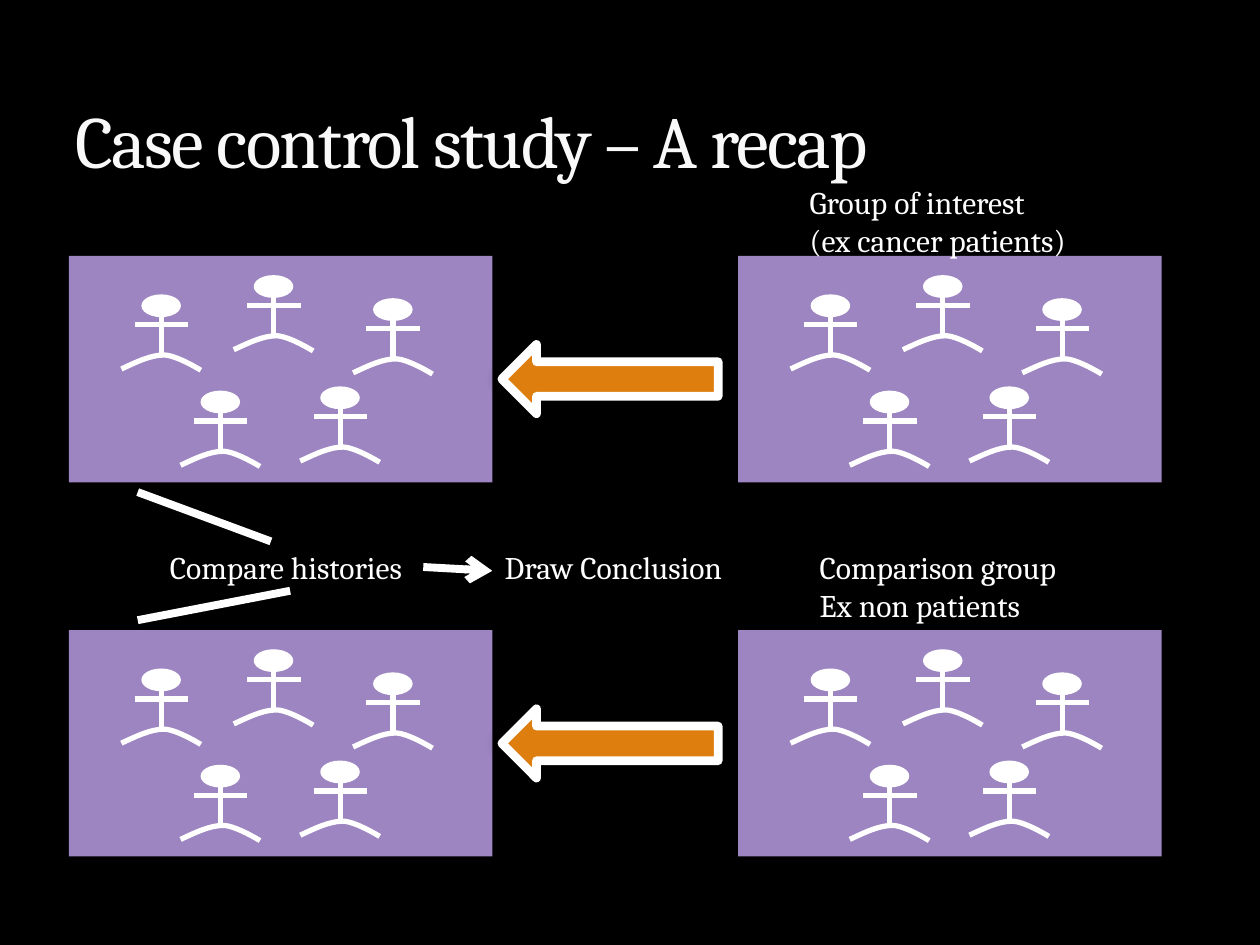
from lxml import etree
from pptx import Presentation
from pptx.dml.color import RGBColor
from pptx.enum.shapes import MSO_CONNECTOR, MSO_SHAPE
from pptx.enum.text import MSO_ANCHOR
from pptx.oxml.ns import qn
from pptx.util import Pt

STRAIGHT = MSO_CONNECTOR.STRAIGHT
RECTANGLE, OVAL, LEFT_ARROW = MSO_SHAPE.RECTANGLE, MSO_SHAPE.OVAL, MSO_SHAPE.LEFT_ARROW
TOP, BOTTOM = MSO_ANCHOR.TOP, MSO_ANCHOR.BOTTOM

HEX = {"background": "000000", "white": "FFFFFF", "title": "F9F9F9",
       "panel": "9C85C0", "arrow": "DD7E0E", "shadow": "000000"}
COLOR = {name: RGBColor.from_string(value) for name, value in HEX.items()}

prs = Presentation()
prs.slide_width, prs.slide_height = Pt(720), Pt(540)
slide = prs.slides.add_slide(prs.slide_layouts[6])
slide.background.fill.solid()
slide.background.fill.fore_color.rgb = COLOR["background"]


def add_line(shapes, x1, y1, x2, y2, width):
    line = shapes.add_connector(STRAIGHT, Pt(x1), Pt(y1), Pt(x2), Pt(y2))
    line.line.color.rgb = COLOR["white"]
    line.line.width = Pt(width)
    etree.SubElement(line._element.spPr, qn("a:effectLst"))
    return line


def add_filled(shapes, kind, x, y, width, height, color):
    shape = shapes.add_shape(kind, Pt(x), Pt(y), Pt(width), Pt(height))
    shape.shadow.inherit = False
    shape.fill.solid()
    shape.fill.fore_color.rgb = COLOR[color]
    shape.line.fill.background()
    return shape


# Legs: a start point, then two Bezier curves of three points each,
# measured from the spine and the top of the head
leg_points = [(-22.8, 42.7), (-14.4, 38.8), (-5.9, 34.6), (1.8, 34.7),
              (9.1, 35), (22.6, 43.4), (22.6, 43.4)]

# Four panels of five people, each placed by spine and top of head
people = [(52.8, 22), (117, 11), (86.6, 77), (155, 74.6), (185.2, 24.2)]
for panel_y in (146.2, 360):
    for panel_x in (39.4, 421.8):
        group = slide.shapes.add_group_shape().shapes
        add_filled(group, RECTANGLE, panel_x, panel_y, 242, 129.4, "panel")
        for dx, dy in people:
            spine, top = panel_x + dx, panel_y + dy
            outline = [(Pt(spine + x), Pt(top + y)) for x, y in leg_points]
            builder = group.build_freeform(*outline[0])
            builder.add_line_segments(outline[1:], close=False)
            legs = builder.convert_to_shape()
            # Turn each three line segments into one Bezier curve
            segments = list(legs._element.iter(qn("a:lnTo")))
            for first in range(0, len(segments), 3):
                bezier = etree.Element(qn("a:cubicBezTo"))
                segments[first].addprevious(bezier)
                for segment in segments[first:first + 3]:
                    bezier.append(segment[0])
                    segment.getparent().remove(segment)
            legs.shadow.inherit = False
            legs.fill.background()
            legs.line.color.rgb = COLOR["white"]
            legs.line.width = Pt(3)
            add_line(group, spine, top + 10.9, spine, top + 34.7, 3)
            add_line(group, spine - 15.2, top + 17.4, spine + 15.4, top + 17.4, 3)
            add_filled(group, OVAL, spine - 11.4, top, 22.6, 13, "white")

# Arrows from the groups back to their histories
for arrow_y in (196.8, 405):
    arrow = add_filled(slide.shapes, LEFT_ARROW, 286.8, arrow_y, 123.6, 39.6, "arrow")
    arrow.line.color.rgb = COLOR["white"]
    arrow.line.width = Pt(5)
    effects = arrow._element.spPr.find(qn("a:effectLst"))
    shadow = etree.SubElement(effects, qn("a:outerShdw"), blurRad=str(Pt(7.5)),
                              dist="0", dir="0", algn="ctr", rotWithShape="0")
    shade = etree.SubElement(shadow, qn("a:srgbClr"), val=HEX["shadow"])
    etree.SubElement(shade, qn("a:alpha"), val="50000")

# Lines from the histories to the comparison, then on to the conclusion
add_line(slide.shapes, 78.7, 281.2, 154.8, 309.4, 4.5)
add_line(slide.shapes, 78.7, 354.4, 165.8, 337.6, 4.5)
to_conclusion = add_line(slide.shapes, 241.9, 324, 281.3, 326.2, 4.5)
etree.SubElement(to_conclusion.line._get_or_add_ln(), qn("a:tailEnd"), type="arrow")

# Title and labels
title_format = {"name": "Cambria", "size": Pt(42)}
label_format = {"name": "Cambria", "size": Pt(18)}
texts = [
    (["Case control study – A recap"], 36, 12.2, 648, 95.8, title_format, "title", BOTTOM),
    (["Compare histories"], 90, 309.6, 163.4, 29, label_format, "white", TOP),
    (["Draw Conclusion"], 281.3, 309.6, 168.5, 29, label_format, "white", TOP),
    (["Comparison group", "Ex non patients"], 461.3, 309.6, 168.5, 51,
     label_format, "white", TOP),
    (["Group of interest", "(ex cancer patients)"], 455.6, 101.2, 168.5, 51,
     label_format, "white", TOP),
]
for lines, x, y, width, height, font_format, color, anchor in texts:
    frame = slide.shapes.add_textbox(Pt(x), Pt(y), Pt(width), Pt(height)).text_frame
    frame.word_wrap = True
    frame.vertical_anchor = anchor
    frame.text = "\n".join(lines)
    for paragraph in frame.paragraphs:
        run = paragraph.runs[0]
        for attribute, value in font_format.items():
            setattr(run.font, attribute, value)
        run.font.color.rgb = COLOR[color]
        if font_format is title_format:
            for attribute, value in {"spc": "-100", "kern": "0"}.items():
                run._r.get_or_add_rPr().set(attribute, value)

prs.save("out.pptx")
